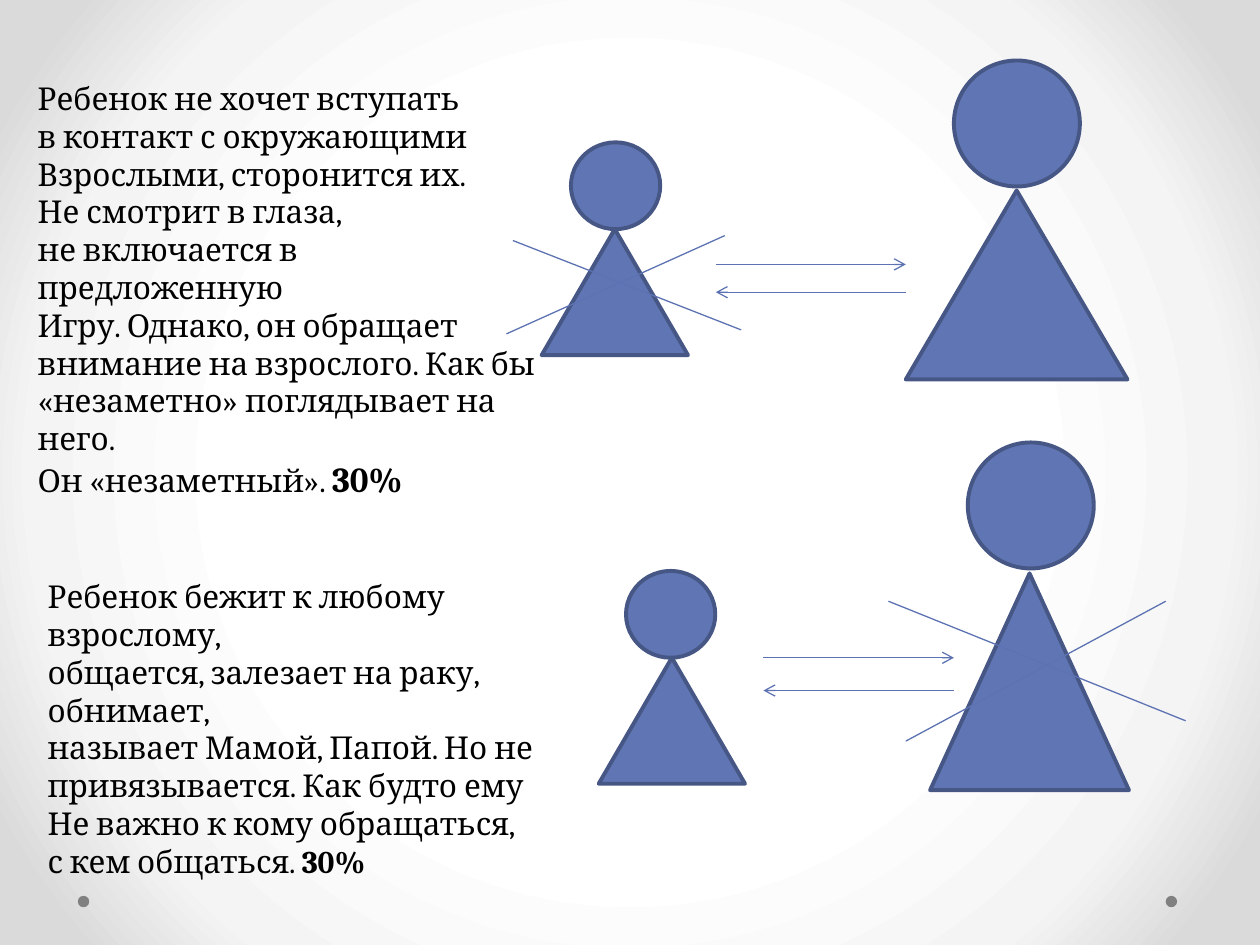
from pptx import Presentation
from pptx.dml.color import RGBColor
from pptx.enum.shapes import MSO_CONNECTOR, MSO_SHAPE
from pptx.enum.text import MSO_AUTO_SIZE
from pptx.oxml import parse_xml
from pptx.oxml.ns import nsdecls
from pptx.util import Cm, Pt

hues = {"body": "6076B4", "edge": "475785", "line": "5C72B2", "dot": "808080",
        "text": "000000", "core": "FFFFFF", "mid": "F4F4F4", "rim": "DADADA"}

deck = Presentation()
deck.slide_width, deck.slide_height = Cm(25.4), Cm(19.05)
slide = deck.slides.add_slide(deck.slide_layouts[6])

stops = "".join(
    f'<a:gs pos="{pos}000"><a:srgbClr val="{hues[name]}"/></a:gs>'
    for pos, name in [(50, "core"), (76, "mid"), (92, "rim")])
slide.element.cSld.insert(0, parse_xml(
    f'<p:bg {nsdecls("p", "a")}><p:bgPr><a:gradFill><a:gsLst>{stops}</a:gsLst>'
    '<a:path path="circle"><a:fillToRect l="50000" t="50000" r="50000" b="50000"/>'
    '</a:path></a:gradFill><a:effectLst/></p:bgPr></p:bg>'))


def add_form(kind, box, fill, edge=None):
    form = slide.shapes.add_shape(kind, *map(Cm, box))
    form.shadow.inherit = False
    form.fill.solid()
    form.fill.fore_color.rgb = RGBColor.from_string(hues[fill])
    if edge:
        form.line.color.rgb = RGBColor.from_string(hues[edge])
        form.line.width = Pt(2.25)
    else:
        form.line.fill.background()


def add_line(ends, arrow=False):
    line = slide.shapes.add_connector(MSO_CONNECTOR.STRAIGHT, *map(Cm, ends))
    line.line.color.rgb = RGBColor.from_string(hues["line"])
    line.line.width = Pt(0.75)
    if arrow:
        line.line._get_or_add_ln().append(
            parse_xml(f'<a:tailEnd {nsdecls("a")} type="arrow"/>'))
    line._element.spPr.append(parse_xml(f'<a:effectLst {nsdecls("a")}/>'))


for left in (23.5, 1.57):
    add_form(MSO_SHAPE.OVAL, (left, 18.06, 0.23, 0.23), "dot")

scenes = [
    {"adult": [(19.23, 1.22, 2.54, 2.54), (18.26, 3.84, 4.47, 3.81)],
     "child": [(11.51, 2.87, 1.8, 1.75), (10.92, 4.62, 2.95, 2.54)],
     "arrows": (14.43, 18.26, 5.33, 5.89),
     "cross": [(10.34, 4.85, 14.94, 6.65), (10.21, 6.73, 14.61, 4.75)],
     "box": (0.51, 1.47, 10.69, 7.26),
     "share": 20,
     "text": ["Ребенок не хочет вступать",
              "в контакт с окружающими",
              "Взрослыми, сторонится их.",
              "Не смотрит в глаза,",
              "не включается в предложенную",
              "Игру. Однако, он обращает",
              "внимание на взрослого. Как бы",
              "«незаметно» поглядывает на него.",
              "Он «незаметный». "]},
    {"adult": [(19.51, 8.92, 2.54, 2.54), (18.75, 11.56, 4.01, 4.37)],
     "child": [(12.62, 11.51, 1.8, 1.75), (12.07, 13.26, 2.95, 2.54)],
     "arrows": (15.39, 19.23, 13.26, 13.92),
     "cross": [(17.91, 12.12, 23.9, 14.53), (18.26, 14.94, 23.5, 12.12)],
     "box": (0.71, 11.51, 11.96, 4.88),
     "share": 18,
     "text": ["Ребенок бежит к любому взрослому,",
              "общается, залезает на раку, обнимает,",
              "называет Мамой, Папой. Но не",
              "привязывается. Как будто ему",
              "Не важно к кому обращаться,",
              "с кем общаться. "]},
]

for scene in scenes:
    for who in ("adult", "child"):
        head, torso = scene[who]
        add_form(MSO_SHAPE.OVAL, head, "body", "edge")
        add_form(MSO_SHAPE.ISOSCELES_TRIANGLE, torso, "body", "edge")

    left, right, top, low = scene["arrows"]
    add_line((left, top, right, top), arrow=True)
    add_line((right, low, left, low), arrow=True)
    for ends in scene["cross"]:
        add_line(ends)

    frame = slide.shapes.add_textbox(*map(Cm, scene["box"])).text_frame
    frame.word_wrap = True
    frame.auto_size = MSO_AUTO_SIZE.SHAPE_TO_FIT_TEXT
    frame.text = "\n".join(scene["text"])
    for para in frame.paragraphs:
        para.font.name = "Cambria"
        para.font.size = Pt(18)
        para.font.color.rgb = RGBColor.from_string(hues["text"])
    share = para.add_run()
    share.text = "30%"
    share.font.bold = True
    share.font.size = Pt(scene["share"])

deck.save("out.pptx")
